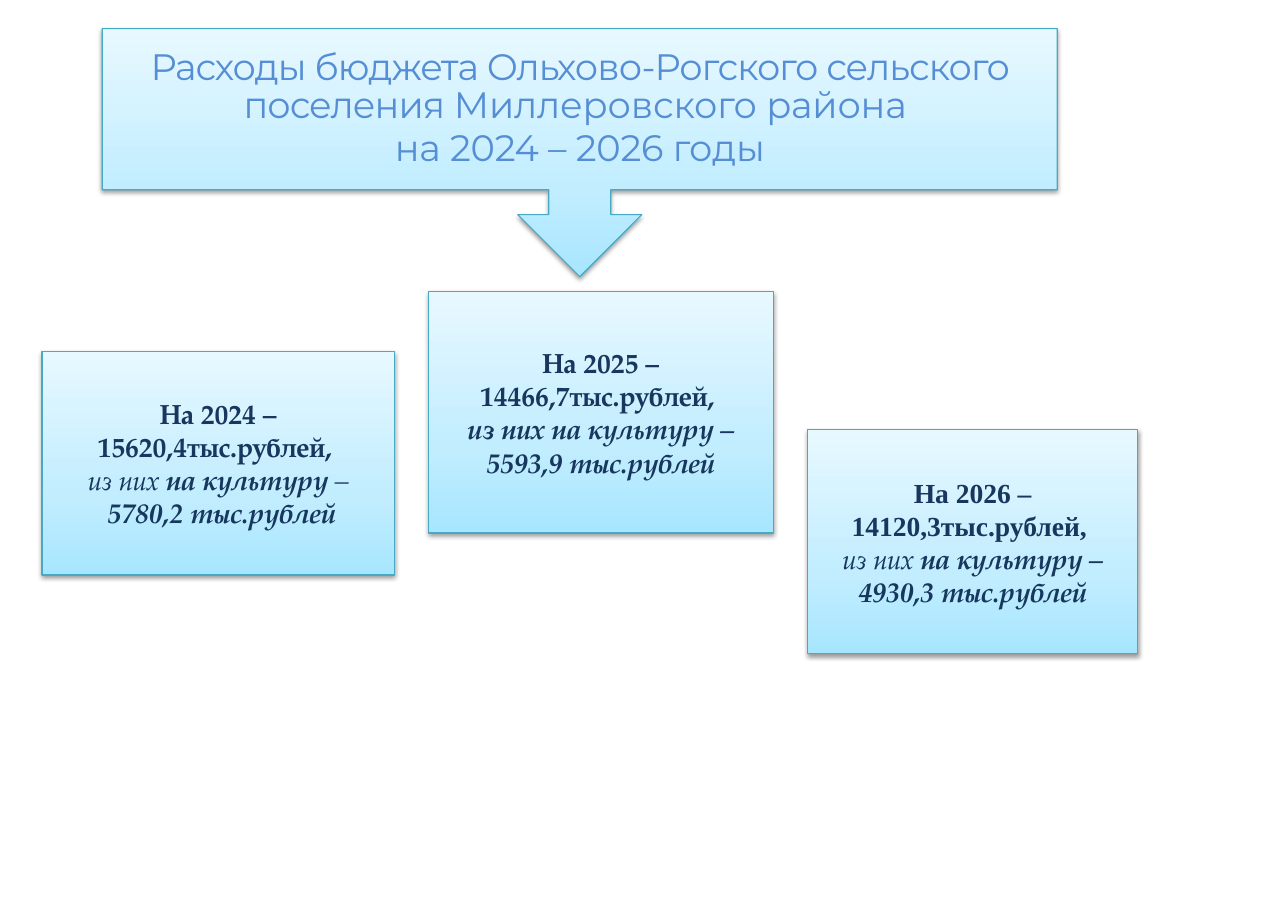
"""Build the slide on the settlement's budget expenses for 2024 – 2026."""
from copy import deepcopy
from dataclasses import dataclass

from lxml import etree
from pptx import Presentation
from pptx import util as u
from pptx.dml.color import RGBColor
from pptx.enum import shapes, text
from pptx.oxml import ns


@dataclass(frozen=True)
class Theme:
    gradient: tuple = ((0, "A7E6FF"), (0.35, "C1EDFF"), (1, "E7F8FF"))
    outline: str = "46AAC5"
    shadow: str = "000000"
    heading: str = "558ED5"
    body: str = "17375E"
    heading_font: str = "Montserrat"
    body_font: str = "TeX Gyre Pagella"
    accent_font: str = "Times New Roman"
    heading_size: int = 24
    body_size: int = 18


class BudgetSlide:
    def __init__(self, deck, theme):
        self.theme = theme
        self.slide = deck.slides.add_slide(deck.slide_layouts[6])

    def panel(self, kind, left, top, width, height):
        panel = self.slide.shapes.add_shape(
            kind, u.Cm(left), u.Cm(top), u.Cm(width), u.Cm(height))
        panel.line.color.rgb = RGBColor.from_string(self.theme.outline)
        panel.line.width = u.Pt(0.75)
        self.paint(panel)
        self.drop_shadow(panel)
        panel.text_frame.word_wrap = True
        panel.text_frame.vertical_anchor = text.MSO_ANCHOR.MIDDLE
        return panel

    def paint(self, panel):
        panel.fill.gradient()
        panel.fill.gradient_angle = 90
        stop_list = panel._element.spPr.find(".//" + ns.qn("a:gsLst"))
        stop_list.append(deepcopy(stop_list[0]))
        for stop, (position, color) in zip(panel.fill.gradient_stops, self.theme.gradient):
            stop.position = position
            stop.color.rgb = RGBColor.from_string(color)

    def drop_shadow(self, panel):
        panel.shadow.inherit = False
        effects = panel._element.spPr.find(ns.qn("a:effectLst"))
        shadow = etree.SubElement(
            effects, ns.qn("a:outerShdw"), blurRad="40000", dist="20000",
            dir="5400000", rotWithShape="0")
        color = etree.SubElement(shadow, ns.qn("a:srgbClr"), val=self.theme.shadow)
        etree.SubElement(color, ns.qn("a:alpha"), val="38000")

    def paragraphs(self, panel, count):
        frame = panel.text_frame
        lines = [frame.paragraphs[0]] + [frame.add_paragraph() for _ in range(count - 1)]
        for line in lines:
            line.alignment = text.PP_ALIGN.CENTER
        return lines

    def phrase(self, line, words, font, size, color):
        run = line.add_run()
        run.text = words
        run.font.name = font
        run.font.size = u.Pt(size)
        run.font.color.rgb = RGBColor.from_string(color)
        return run

    def heading(self, position, content):
        callout = self.panel(shapes.MSO_SHAPE.DOWN_ARROW_CALLOUT, *position)
        for line, parts in zip(self.paragraphs(callout, len(content)), content):
            line.line_spacing = u.Pt(25)
            line.space_before = u.Pt(3.5)
            for words, tracking in parts:
                run = self.phrase(line, words, self.theme.heading_font,
                                  self.theme.heading_size, self.theme.heading)
                run.font._element.set("spc", str(tracking))

    def year(self, position, total_font, total, *details):
        box = self.panel(shapes.MSO_SHAPE.RECTANGLE, *position)
        total_line, *detail_lines = self.paragraphs(box, len(details) + 1)
        style = self.theme.body_size, self.theme.body
        self.phrase(total_line, total, total_font, *style).font.bold = True
        for line, parts in zip(detail_lines, details):
            for words, bold in parts:
                run = self.phrase(line, words, self.theme.body_font, *style)
                run.font.bold = bold
                run.font.italic = True


def main():
    deck = Presentation()
    deck.slide_width, deck.slide_height = u.Cm(29.7), u.Cm(20.98)
    theme = Theme()
    budget = BudgetSlide(deck, theme)
    budget.heading((2.36, 0.66, 22.02, 5.72), [
        [("Расходы бюджета Ольхово-Рогского сельского поселения ", -60),
         ("Миллеровского района ", -10)],
        [("на 2024 – 2026 годы", -10)],
    ])
    budget.year(
        (0.97, 8.1, 8.13, 5.16), theme.body_font, "На 2024 – 15620,4тыс.рублей, ",
        [("из них ", False), ("на культуру ", True), ("–", False)],
        [(" ", False), ("5780,2 тыс.рублей", True)])
    budget.year(
        (9.88, 6.73, 7.95, 5.56), theme.body_font, "На 2025 – 14466,7тыс.рублей, ",
        [("из них на культуру – 5593,9 тыс.рублей", True)])
    budget.year(
        (18.62, 9.91, 7.62, 5.16), theme.accent_font, "На 2026 – 14120,3тыс.рублей, ",
        [("из них ", False), ("на культуру – 4930,3 тыс.рублей", True)])
    deck.save("out.pptx")


if __name__ == "__main__":
    main()
